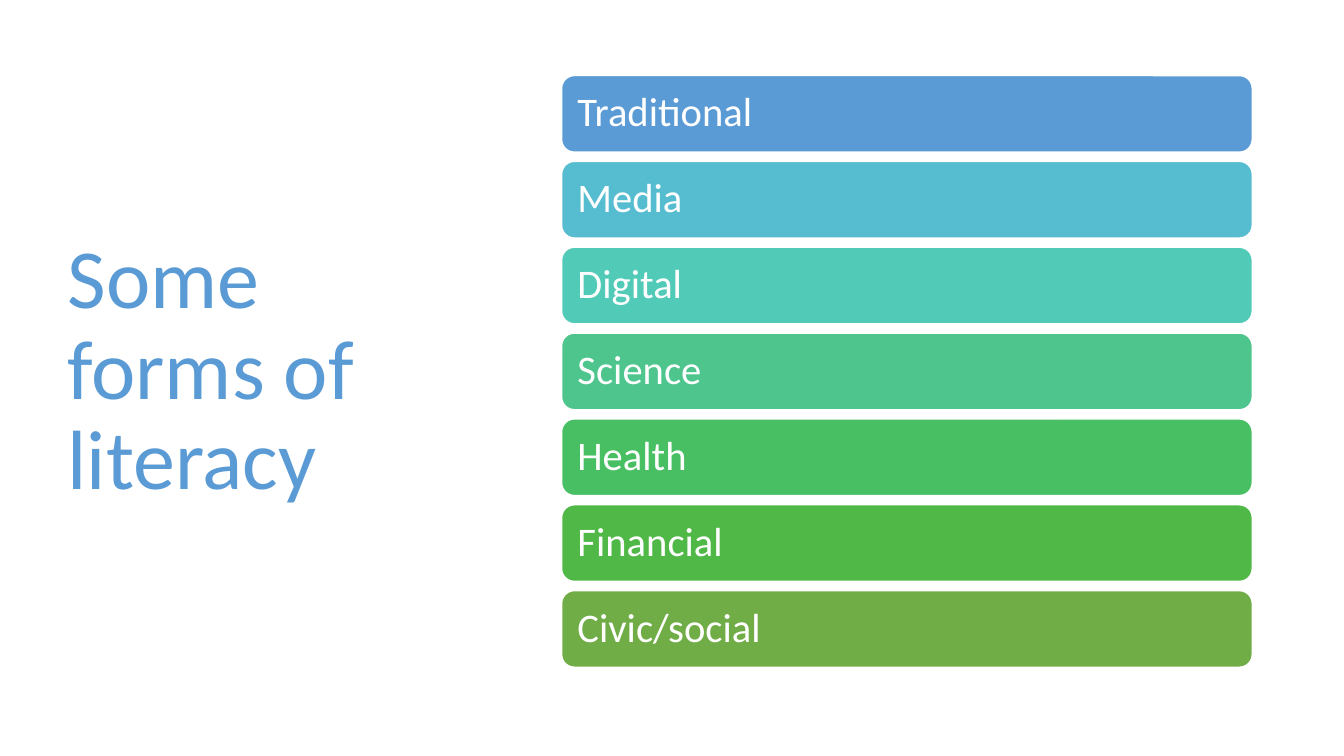
"""Build a slide that lists forms of literacy as a stack of coloured bars."""
from dataclasses import dataclass

from pptx import Presentation
from pptx.dml.color import RGBColor
from pptx.enum.shapes import MSO_SHAPE
from pptx.enum.text import MSO_ANCHOR, MSO_AUTO_SIZE, PP_ALIGN
from pptx.slide import Slide
from pptx.text.text import TextFrame
from pptx.util import Inches, Pt


@dataclass(frozen=True)
class Theme:
    font: str = "Calibri"
    blue: str = "5B9BD5"
    white: str = "FFFFFF"
    title: int = 60
    label: int = 29
    edge: int = 1


@dataclass(frozen=True)
class Bar:
    text: str
    fill: str


THEME = Theme()
BARS = [
    Bar("Traditional", THEME.blue),
    Bar("Media", "56BCD0"),
    Bar("Digital", "52CAB8"),
    Bar("Science", "4DC58D"),
    Bar("Health", "49BF64"),
    Bar("Financial", "50B846"),
    Bar("Civic/social", "70AD47"),
]
LEFT, FIRST, LAST, WIDTH, HEIGHT = 5.57, 0.75, 5.86, 6.85, 0.76
PITCH = (LAST - FIRST) / (len(BARS) - 1)
INSET = Inches(0.12)
FRAME = {
    "word_wrap": True,
    "auto_size": MSO_AUTO_SIZE.NONE,
    "vertical_anchor": MSO_ANCHOR.MIDDLE,
}
PAD = {f"margin_{side}": INSET for side in ("left", "right", "top", "bottom")}
PARA = {"alignment": PP_ALIGN.LEFT, "line_spacing": 0.9}


def apply(target: object, values: dict) -> None:
    """Set each named attribute on the target."""
    for name, value in values.items():
        setattr(target, name, value)


def write(frame: TextFrame, text: str, size: int, color: str) -> None:
    """Fill a text frame with one formatted paragraph."""
    apply(frame, FRAME)
    frame.text = text
    para = frame.paragraphs[0]
    apply(para, PARA)
    font = para.runs[0].font
    apply(font, {"name": THEME.font, "size": Pt(size), "bold": False})
    font.color.rgb = RGBColor.from_string(color)


def head(slide: Slide, text: str) -> None:
    """Place the title at the left of the slide."""
    title = slide.shapes.title
    apply(title, {
        "left": Inches(0.57),
        "top": Inches(0.68),
        "width": Inches(4.16),
        "height": Inches(6.02),
    })
    write(title.text_frame, text, THEME.title, THEME.blue)


def draw(slide: Slide, bar: Bar, row: int) -> None:
    """Draw one labelled bar in its row of the stack."""
    shape = slide.shapes.add_shape(
        MSO_SHAPE.ROUNDED_RECTANGLE,
        Inches(LEFT), Inches(FIRST + row * PITCH), Inches(WIDTH), Inches(HEIGHT),
    )
    shape.shadow.inherit = False
    shape.fill.solid()
    shape.fill.fore_color.rgb = RGBColor.from_string(bar.fill)
    shape.line.color.rgb = RGBColor.from_string(THEME.white)
    shape.line.width = Pt(THEME.edge)
    apply(shape.text_frame, PAD)
    write(shape.text_frame, bar.text, THEME.label, THEME.white)


def main() -> None:
    """Build and save the deck."""
    deck = Presentation()
    apply(deck, {"slide_width": Inches(13.33), "slide_height": Inches(7.5)})
    slide = deck.slides.add_slide(deck.slide_layouts.get_by_name("Title Only"))
    head(slide, "Some forms of literacy")
    for row, bar in enumerate(BARS):
        draw(slide, bar, row)
    deck.save("out.pptx")


if __name__ == "__main__":
    main()
